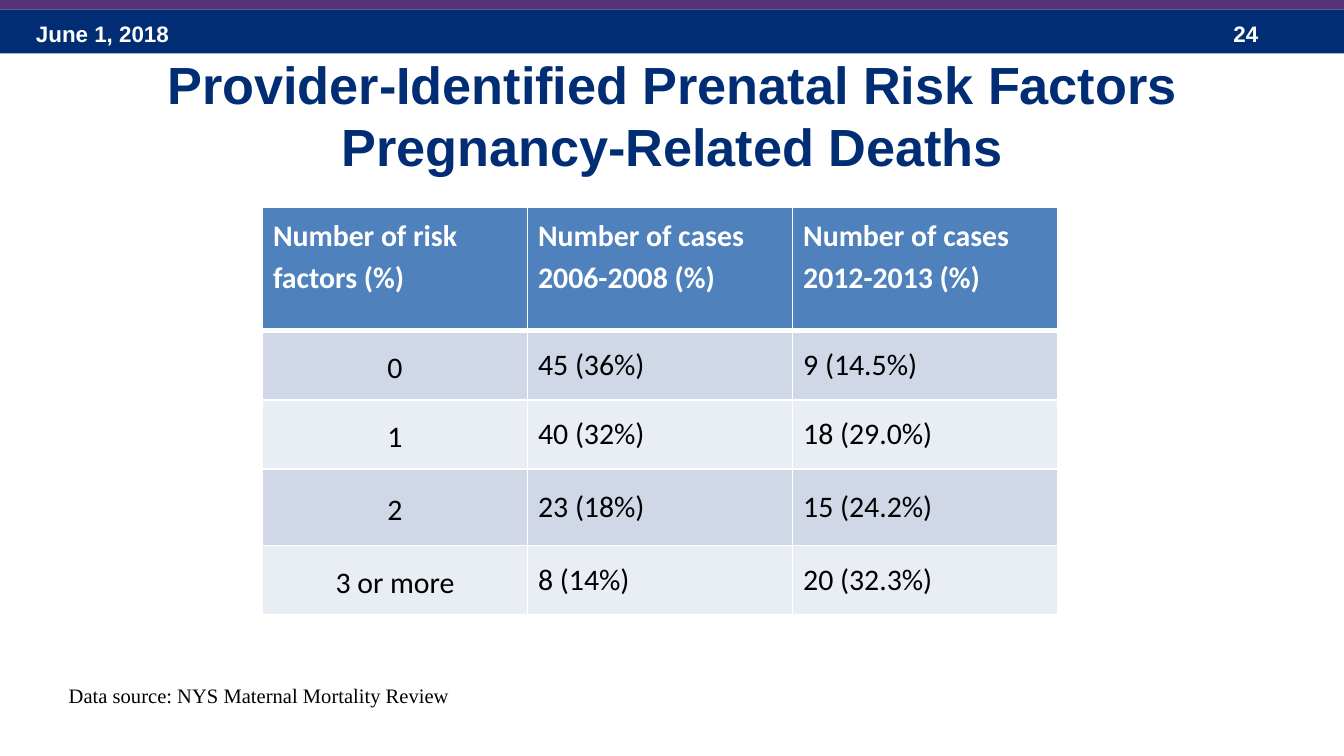
from lxml.etree import SubElement as Sub
from pptx import Presentation
from pptx.dml.color import RGBColor as RGB
from pptx.enum.shapes import MSO_SHAPE as Kind
from pptx.enum.text import MSO_ANCHOR as Anchor, PP_ALIGN as Align
from pptx.oxml.ns import qn
from pptx.util import Cm, Pt

HUES = {
    "navy": "002D73", "plum": "553278", "white": "FFFFFF", "black": "000000",
    "head": "4F81BD", "odd": "D0D8E8", "even": "E9EDF4",
}
ROWS = [
    ["Number of risk factors (%)", "Number of cases\n2006-2008 (%)", "Number of cases\n2012-2013 (%)"],
    ["0", "45 (36%)", "9 (14.5%)"],
    ["1", "40 (32%)", "18 (29.0%)"],
    ["2", "23 (18%)", "15 (24.2%)"],
    ["3 or more", "8 (14%)", "20 (32.3%)"],
]
HIGHS = [2.33, 1.31, 1.31, 1.44, 1.31]


class Deck:
    def __init__(self, wide, high):
        self.file = Presentation()
        self.file.slide_width, self.file.slide_height = Cm(wide), Cm(high)
        self.slide = self.file.slides.add_slide(self.file.slide_layouts[5])

    def hue(self, name):
        return RGB.from_string(HUES[name])

    def paint(self, item, name):
        item.fill.solid()
        item.fill.fore_color.rgb = self.hue(name)

    def style(self, para, face, size, hue, bold=False):
        font = para.font
        font.name, font.size, font.bold = face, Pt(size), bold
        font.color.rgb = self.hue(hue)

    def band(self, top, high, hue):
        bar = self.slide.shapes.add_shape(Kind.RECTANGLE, 0, Cm(top), self.file.slide_width, Cm(high))
        bar.shadow.inherit = False
        self.paint(bar, hue)
        bar.line.fill.background()

    def title(self, words, left, top, wide, high):
        head = self.slide.shapes.title
        head.left, head.top, head.width, head.height = map(Cm, (left, top, wide, high))
        frame = head.text_frame
        frame.text = words
        frame.vertical_anchor = Anchor.MIDDLE
        para = frame.paragraphs[0]
        para.alignment = Align.CENTER
        self.style(para, "Arial", 28, "navy", True)

    def label(self, words, left, top, wide, high, face, size, hue, bold=False, wrap=True):
        box = self.slide.shapes.add_textbox(*map(Cm, (left, top, wide, high)))
        frame = box.text_frame
        frame.word_wrap = wrap
        frame.text = words
        self.style(frame.paragraphs[0], face, size, hue, bold)

    def edge(self, cell, side, size):
        props = cell._tc.get_or_add_tcPr()
        line = Sub(props, qn(f"a:ln{side}"), w=str(Pt(size)))
        fill = Sub(line, qn("a:solidFill"))
        Sub(fill, qn("a:srgbClr"), val=HUES["white"])

    def cell(self, cell, words, row, col):
        top = row == 0
        for side in "LRTB":
            thick = (top and side == "B") or (row == 1 and side == "T")
            self.edge(cell, side, 3 if thick else 1)
        self.paint(cell, "head" if top else "odd" if row % 2 else "even")
        cell.margin_left = cell.margin_right = Cm(0.2)
        cell.margin_top = cell.margin_bottom = Cm(0.1)
        cell.vertical_anchor = Anchor.TOP if top else Anchor.MIDDLE
        cell.text = words
        for para in cell.text_frame.paragraphs:
            if top or col == 0:
                para.line_spacing = 1.15
            if not top and col == 0:
                para.alignment = Align.CENTER
            self.style(para, "Calibri", 16, "white" if top else "black", top)

    def table(self, rows, highs, left, top, wide):
        size = len(rows), len(rows[0])
        grid = self.slide.shapes.add_table(*size, *map(Cm, (left, top, wide, sum(highs)))).table
        for row, (texts, high) in enumerate(zip(rows, highs)):
            grid.rows[row].height = Cm(high)
            for col, words in enumerate(texts):
                self.cell(grid.cell(row, col), words, row, col)


def main():
    deck = Deck(25.4, 14.29)
    deck.band(0.18, 0.83, "navy")
    deck.label("June 1, 2018", 0.43, 0.25, 5.92, 0.77, "Arial", 12, "white", True)
    deck.label("24", 23.06, 0.25, 1.9, 0.77, "Arial", 12, "white", True)
    deck.band(-0.05, 0.23, "plum")
    deck.title("Provider-Identified Prenatal Risk Factors\vPregnancy-Related Deaths", 1.27, 0.97, 22.86, 2.39)
    deck.table(ROWS, HIGHS, 4.96, 3.92, 15.03)
    deck.label("Data source: NYS Maternal Mortality Review", 1.05, 12.78, 7.72, 0.73,
               "Times New Roman", 11, "black", wrap=False)
    deck.file.save("out.pptx")


if __name__ == "__main__":
    main()
